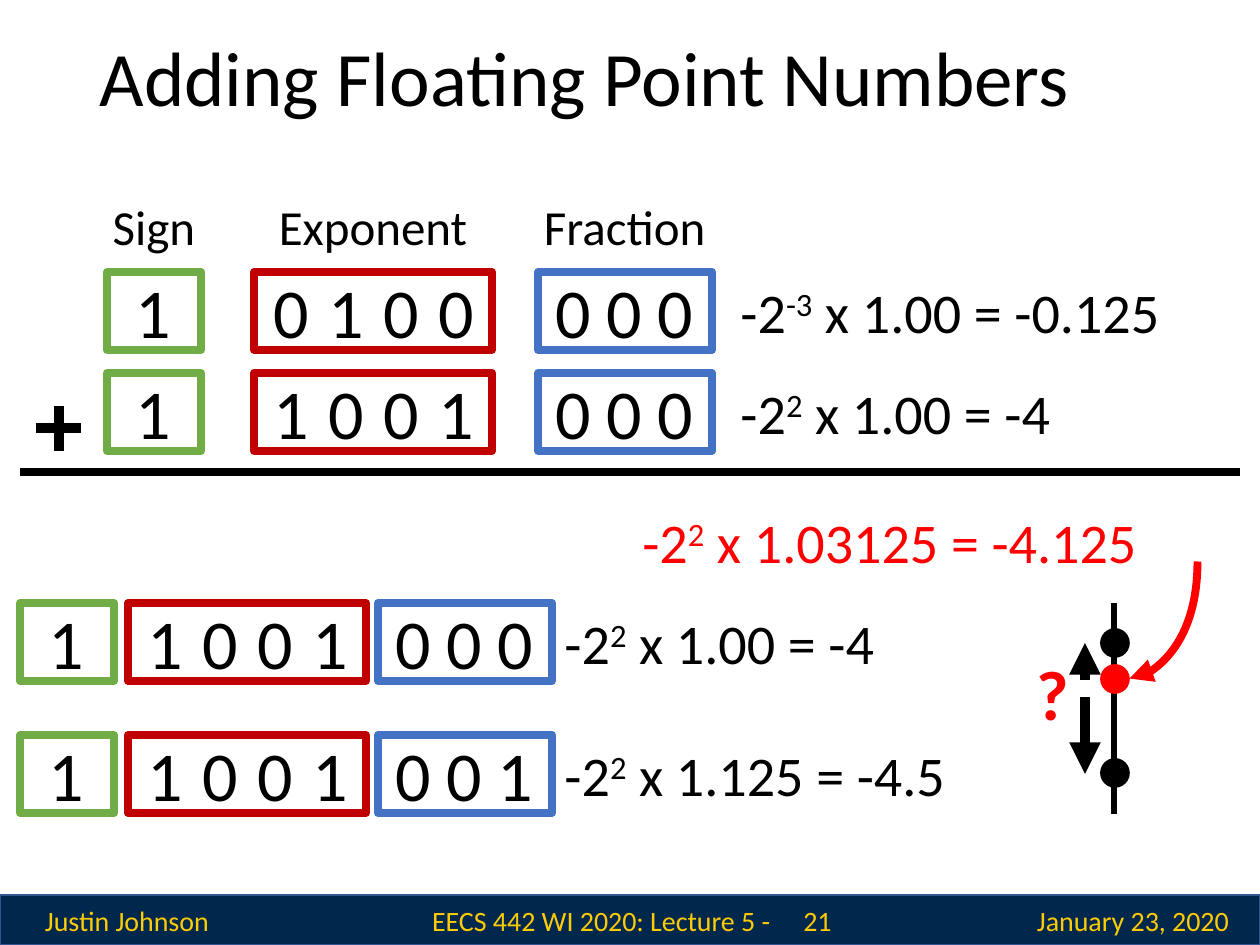
from pptx import Presentation
from pptx import util as u
from pptx.dml.color import RGBColor
from pptx.enum import shapes, text
from pptx.oxml.ns import qn
from lxml import etree

PX = 914400 / 126
FONT = "Calibri"
COLORS = {"black": "000000", "red": "FF0000", "navy": "00274C", "navy_line": "325491",
          "maize": "FFCB05", "sign": "70AD47", "exponent": "C00000", "fraction": "4472C4"}
LEFT, CENTER, RIGHT = text.PP_ALIGN.LEFT, text.PP_ALIGN.CENTER, text.PP_ALIGN.RIGHT
TOP, MIDDLE = text.MSO_ANCHOR.TOP, text.MSO_ANCHOR.MIDDLE

prs = Presentation()
prs.slide_width, prs.slide_height = u.Inches(10), u.Inches(7.5)
s = prs.slides.add_slide(prs.slide_layouts[5])


def write(sp, box, runs, size, color="black", align=CENTER, anchor=TOP, bold=False):
    """Place sp at box (px) and fill it; every second run is a superscript."""
    for name, value in zip(("left", "top", "width", "height"), box):
        setattr(sp, name, round(value * PX))
    tf = sp.text_frame
    for name, value in {"word_wrap": True, "vertical_anchor": anchor,
                        "auto_size": text.MSO_AUTO_SIZE.NONE}.items():
        setattr(tf, name, value)
    p = tf.paragraphs[0]
    p.alignment = align
    for i, words in enumerate(runs):
        r = p.add_run()
        r.text = words
        for name, value in {"name": FONT, "size": u.Pt(size), "bold": bold}.items():
            setattr(r.font, name, value)
        r.font.color.rgb = RGBColor.from_string(COLORS[color])
        if i % 2:
            r.font._element.set("baseline", "30000")


def draw(kind, box, line, width, fill=None, arrow=False):
    """Draw a preset shape (left, top, width, height) or a connector (x1, y1, x2, y2)."""
    box = [round(v * PX) for v in box]
    if isinstance(kind, shapes.MSO_CONNECTOR):
        sp = s.shapes.add_connector(kind, *box)
    else:
        sp = s.shapes.add_shape(kind, *box)
        sp.shadow.inherit = False
        if fill:
            sp.fill.solid()
            sp.fill.fore_color.rgb = RGBColor.from_string(COLORS[fill])
        else:
            sp.fill.background()
    sp.line.color.rgb = RGBColor.from_string(COLORS[line])
    sp.line.width = u.Pt(width)
    if isinstance(kind, shapes.MSO_CONNECTOR):
        if arrow:
            etree.SubElement(sp.line._get_or_add_ln(), qn("a:tailEnd"), type="triangle")
        etree.SubElement(sp._element.spPr, qn("a:effectLst"))
    return sp


RECT, OVAL = shapes.MSO_SHAPE.RECTANGLE, shapes.MSO_SHAPE.OVAL
STRAIGHT, CURVE = shapes.MSO_CONNECTOR.STRAIGHT, shapes.MSO_CONNECTOR.CURVE

# Title
write(s.shapes.title, (87, 25, 1086, 113), ["Adding Floating Point Numbers"], 44,
      align=LEFT, anchor=MIDDLE)
s.shapes.title.text_frame.paragraphs[0].line_spacing = 0.9

# Footer bar
draw(RECT, (0, 895, 1260, 50), "navy_line", 1, "navy")
for x, w, words in [(1, 252, "Justin Johnson"), (1007, 252, "January 23, 2020"),
                    (416, 377, "EECS 442 WI 2020: Lecture 5 - "), (762, 111, "21")]:
    write(s.shapes.add_textbox(0, 0, 0, 0), (x, 895, w, 50), [words], 16, "maize",
          anchor=MIDDLE)

# Column headings
for x, w, words in [(84, 140, "Sign"), (254, 238, "Exponent"), (451, 347, "Fraction")]:
    write(s.shapes.add_textbox(0, 0, 0, 0), (x, 190, w, 72), [words], 28)

# Floating point numbers: operands spread out, candidate results packed
FIELDS = [("sign", 94, 11, 0), ("exponent", 238, 2, 55), ("fraction", 174, 0, 51)]
SPREAD, PACKED = (107, 254, 538, 728), (20, 128, 378, 552)
NUMBERS = [
    (272, SPREAD, ("1", "0100", "000"), ("-2", "-3", " x 1.00 = -0.125")),
    (373, SPREAD, ("1", "1001", "000"), ("-2", "2", " x 1.00 = -4")),
    (603, PACKED, ("1", "1001", "000"), ("-2", "2", " x 1.00 = -4")),
    (735, PACKED, ("1", "1001", "001"), ("-2", "2", " x 1.125 = -4.5")),
]
for y, lefts, bits, formula in NUMBERS:
    for (field, w, inset, pitch), x, digits in zip(FIELDS, lefts, bits):
        draw(RECT, (x, y, w, 78), field, 4.5)
        for i, digit in enumerate(digits):
            write(s.shapes.add_textbox(0, 0, 0, 0),
                  (x + inset + i * pitch, y - 10, 70, 97), [digit], 40)
    write(s.shapes.add_textbox(0, 0, 0, 0), (lefts[-1], y - 1, 520, 81), formula, 32,
          align=LEFT)

# Exact sum
write(s.shapes.add_textbox(0, 0, 0, 0), (630, 501, 630, 81),
      ("-2", "2", " x 1.03125 = -4.125"), 32, "red", LEFT)

# Plus sign, sum rule and number line
for ends, width in [((36, 428, 81, 428), 6), ((59, 406, 59, 451), 6),
                    ((20, 472, 1240, 472), 4.5), ((1114, 603, 1114, 814), 3)]:
    draw(STRAIGHT, ends, "black", width)

# Points on the number line
for y, color in [(629, "black"), (759, "black"), (665, "red")]:
    draw(OVAL, (1101, y, 28, 28), color, 1, color)

# Rounding directions
for start, end in [(680, 643), (697, 774)]:
    draw(STRAIGHT, (1085, start, 1085, end), "black", 6, arrow=True)
write(s.shapes.add_textbox(0, 0, 0, 0), (1003, 644, 78, 97), ["?"], 40, "red", RIGHT,
      bold=True)

# Curved arrow from the exact sum to its point: a quarter bend turned by 90 degrees
bend = draw(CURVE, (1105, 586, 1222, 654), "red", 4.5, arrow=True)
bend._element.spPr.find(qn("a:xfrm")).set("rot", "5400000")
bend._element.spPr.find(qn("a:prstGeom")).set("prst", "curvedConnector2")

prs.save("out.pptx")
